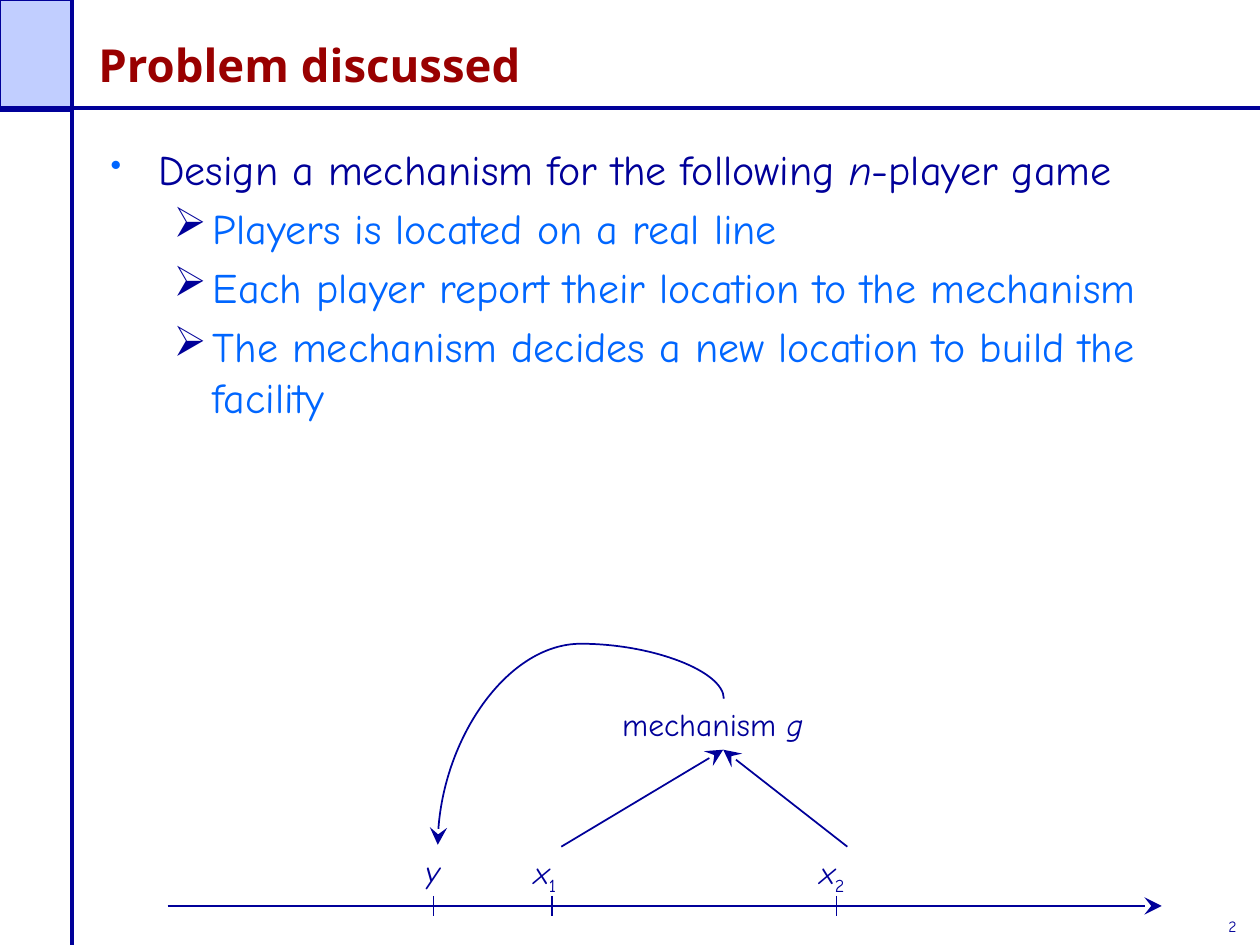
from lxml.etree import SubElement
from pptx import Presentation
from pptx.dml.color import RGBColor
from pptx.enum.shapes import MSO_CONNECTOR, MSO_SHAPE
from pptx.enum.text import MSO_ANCHOR, MSO_AUTO_SIZE, PP_ALIGN
from pptx.oxml.ns import qn
from pptx.util import Inches, Pt

NAVY = RGBColor(0x00, 0x00, 0x99)
BLUE = RGBColor(0x00, 0x66, 0xFF)
PALE = RGBColor(0xC1, 0xCE, 0xFF)
RED = RGBColor(0x99, 0x00, 0x00)


class Deck:
    head = "Noto Sans"
    font = "Comic Neue"

    def __init__(self):
        self.prs = Presentation()
        self.prs.slide_width, self.prs.slide_height = Inches(10), Inches(7.5)
        self.slide = self.prs.slides.add_slide(self.prs.slide_layouts[5])
        self.shapes = self.slide.shapes

    def title(self, text, x, y, w, h):
        box = self.shapes.title
        box.left, box.top, box.width, box.height = map(Inches, (x, y, w, h))
        frame = box.text_frame
        frame.text = text
        frame.vertical_anchor = MSO_ANCHOR.BOTTOM
        para = frame.paragraphs[0]
        para.alignment = PP_ALIGN.LEFT
        font = para.runs[0].font
        font.name, font.size, font.bold = self.head, Pt(26), True
        font.color.rgb = RED

    def rect(self, x, y, w, h):
        box = self.shapes.add_shape(MSO_SHAPE.RECTANGLE, *map(Inches, (x, y, w, h)))
        box.shadow.inherit = False
        box.fill.solid()
        box.fill.fore_color.rgb = PALE
        box.line.color.rgb = NAVY
        box.line.width = Pt(1)

    def fill(self, para, parts, size, color):
        """Parts are (text, style) pairs; style is "", "i" or "sub"."""
        for text, style in parts:
            run = para.add_run()
            run.text = text
            font = run.font
            font.name, font.size, font.italic = self.font, Pt(size), style == "i"
            font.color.rgb = color
            if style == "sub":
                run._r.get_or_add_rPr().set("baseline", "-25000")

    def label(self, parts, x, y, w, h, size=18, wrap=True):
        box = self.shapes.add_textbox(*map(Inches, (x, y, w, h)))
        frame = box.text_frame
        frame.word_wrap = wrap
        frame.auto_size = MSO_AUTO_SIZE.SHAPE_TO_FIT_TEXT
        self.fill(frame.paragraphs[0], parts, size, NAVY)
        return box

    def bullet(self, para, level):
        left, hang, color, size, char = (
            (0.38, 0.38, BLUE, 75, "•"), (0.81, 0.31, NAVY, 100, "➢"))[level]
        para.level = level
        props = para._p.get_or_add_pPr()
        props.set("marL", str(Inches(left)))
        props.set("indent", str(-Inches(hang)))
        tint = SubElement(props, qn("a:buClr"))
        SubElement(tint, qn("a:srgbClr")).set("val", str(color))
        SubElement(props, qn("a:buSzPct")).set("val", str(size * 1000))
        SubElement(props, qn("a:buChar")).set("char", char)

    def body(self, items, x, y, w, h):
        frame = self.shapes.add_textbox(*map(Inches, (x, y, w, h))).text_frame
        frame.word_wrap = True
        for i, (level, parts) in enumerate(items):
            para = frame.add_paragraph() if i else frame.paragraphs[0]
            self.bullet(para, level)
            if i:
                para.space_before = Pt(5)
            self.fill(para, parts, 24, BLUE if level else NAVY)

    def line(self, x1, y1, x2, y2, width=1, arrow=False, kind=MSO_CONNECTOR.STRAIGHT):
        line = self.shapes.add_connector(kind, *map(Inches, (x1, y1, x2, y2)))
        line.line.color.rgb = NAVY
        line.line.width = Pt(width)
        if arrow:
            tail = SubElement(line.line._get_or_add_ln(), qn("a:tailEnd"))
            for key, val in (("type", "stealth"), ("w", "lg"), ("len", "lg")):
                tail.set(key, val)
        SubElement(line._element.spPr, qn("a:effectLst"))
        return line

    def curve(self, x1, y1, x2, y2, turn, bend):
        line = self.line(x1, y1, x2, y2, arrow=True, kind=MSO_CONNECTOR.CURVE)
        props = line._element.spPr
        props.find(qn("a:xfrm")).set("rot", str(turn * 60000))
        geom = props.find(qn("a:prstGeom"))
        guides = geom.find(qn("a:avLst"))
        if guides is None:
            guides = SubElement(geom, qn("a:avLst"))
        guide = SubElement(guides, qn("a:gd"))
        guide.set("name", "adj1")
        guide.set("fmla", f"val {bend}")


def main():
    deck = Deck()

    # Frame, title and page number
    deck.rect(0, 0, 0.57, 0.88)
    deck.label([("2", "")], 9.65, 7.23, 0.34, 0.25, size=9, wrap=False)
    deck.line(0, 0.86, 10, 0.86, 2.25)
    deck.line(0.57, 0, 0.57, 7.5, 2.25)
    deck.title("Problem discussed", 0.68, 0.12, 8.7, 0.66)

    # Bullets
    deck.body([
        (0, [("Design a mechanism for the following ", ""), ("n", "i"),
             ("-player game", "")]),
        (1, [("Players is located on a real line", "")]),
        (1, [("Each player report their location to the mechanism", "")]),
        (1, [("The mechanism decides a new location to build the facility", "")]),
    ], 0.78, 1.09, 8.98, 6.25)

    # Real line with its ticks
    deck.line(1.33, 7.19, 9.22, 7.19, arrow=True)
    for x in (3.44, 4.38, 6.64):
        deck.line(x, 7.11, x, 7.27)

    # Mechanism, the chosen point and the players who report to it
    hub = deck.label([("mechanism ", ""), ("g", "i")], 4.84, 5.55, 1.8, 0.4)
    deck.label([("y", "i")], 3.28, 6.71, 0.39, 0.4)
    for num, x in (("1", 4.14), ("2", 6.41)):
        spot = deck.label([("x", "i"), (num, "sub")], x, 6.72, 0.63, 0.4)
        link = deck.line(x + 0.31, 6.72, 5.74, 5.95, arrow=True)
        link.begin_connect(spot, 0)
        link.end_connect(hub, 2)

    # Curve from the mechanism to y, drawn on its side and turned
    deck.curve(5.19, 7.26, 4.03, 4.99, turn=270, bend=-37600)

    deck.prs.save("out.pptx")


if __name__ == "__main__":
    main()
